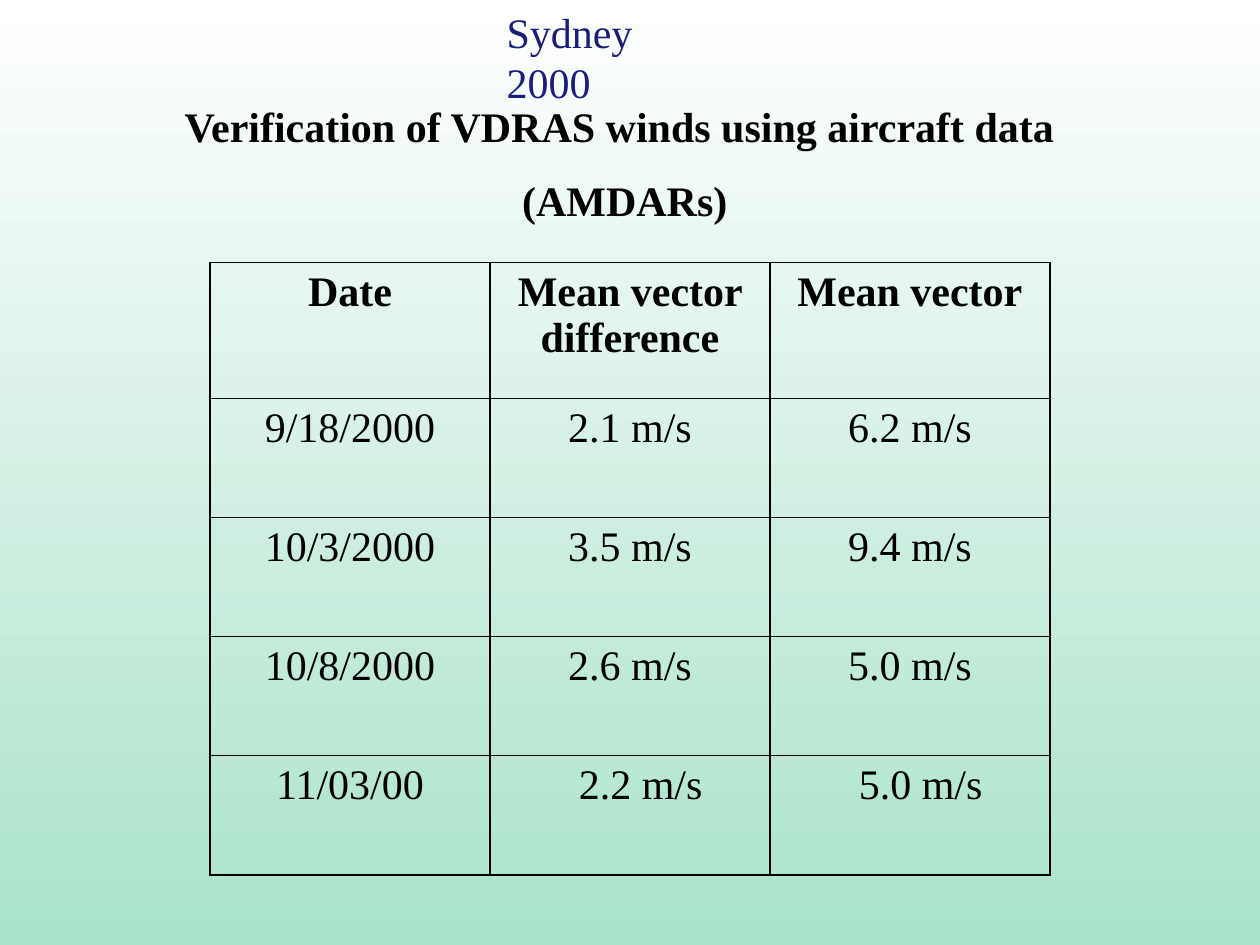
from dataclasses import dataclass

from pptx import Presentation
from pptx import util as u
from pptx.dml.color import RGBColor
from pptx.enum import text
from pptx.oxml import parse_xml
from pptx.oxml.ns import nsdecls


@dataclass(frozen=True)
class Theme:
    font: str = "Times New Roman"
    size: float = 24
    ink: str = "000000"
    navy: str = "191E7A"
    gradient: tuple[str, str] = ("AAE2CA", "FFFFFF")
    border_width: float = 1


@dataclass(frozen=True)
class Area:
    """A rectangle in shares of the slide's width and height."""
    left: float
    top: float
    width: float
    height: float

    def lengths(self) -> dict[str, int]:
        return {"left": int(self.left * WIDTH), "top": int(self.top * HEIGHT),
                "width": int(self.width * WIDTH), "height": int(self.height * HEIGHT)}


@dataclass(frozen=True)
class Reading:
    date: str
    difference: str
    mean: str
    indent: float = 0  # extra left margin of the values, inches

    def values(self) -> tuple[str, str, str]:
        return self.date, self.difference, self.mean


THEME = Theme()
WIDTH, HEIGHT = u.Inches(10), u.Inches(7.5)
TITLE_AREA = Area(0.392, 0, 0.195, 0.5 / 7.5)
HEADING_AREA = Area(1 / 12, 0.1, 0.825, 1.1 / 7.5)
TABLE_AREA = Area(1 / 6, 5 / 18, 2 / 3, 0.648)
HEADER_SHARE = 2 / 9  # of the table's height
HEADING = ("Verification of VDRAS winds using aircraft data ", "(AMDARs)")
READINGS = (
    Reading("Date", "Mean vector difference", "Mean vector"),
    Reading("9/18/2000", "2.1 m/s", "6.2 m/s"),
    Reading("10/3/2000", "3.5 m/s", "9.4 m/s"),
    Reading("10/8/2000", "2.6 m/s", "5.0 m/s"),
    Reading("11/03/00", "2.2 m/s", "5.0 m/s", indent=0.17),
)


def apply(target, values: dict) -> None:
    for name, value in values.items():
        setattr(target, name, value)


def write(frame, lines: tuple[str, ...], color: str, bold: bool = False,
          align=text.PP_ALIGN.CENTER, gap: float = 0) -> None:
    for index, line in enumerate(lines):
        para = frame.paragraphs[0] if index == 0 else frame.add_paragraph()
        apply(para, {"alignment": align, "space_before": u.Pt(gap if index else 0)})
        span = para.add_run()
        span.text = line
        apply(span.font, {"name": THEME.font, "size": u.Pt(THEME.size), "bold": bold})
        span.font.color.rgb = RGBColor.from_string(color)


def paint_background(page) -> None:
    fill = page.background.fill
    fill.gradient()
    fill.gradient_angle = 90
    for stop, color in zip(fill.gradient_stops, THEME.gradient):
        stop.color.rgb = RGBColor.from_string(color)


def border(cell) -> None:
    properties = cell._tc.get_or_add_tcPr()
    for side in "LRTB":
        properties.append(parse_xml(
            f'<a:ln{side} {nsdecls("a")} w="{u.Pt(THEME.border_width)}"><a:solidFill>'
            f'<a:srgbClr val="{THEME.ink}"/></a:solidFill></a:ln{side}>'))


def add_readings(page) -> None:
    area = TABLE_AREA.lengths()
    table = page.shapes.add_table(len(READINGS), 3, **area).table
    apply(table, {"first_row": False, "horz_banding": False})
    header_height = int(area["height"] * HEADER_SHARE)
    body_height = (area["height"] - header_height) // (len(READINGS) - 1)
    for row, reading in enumerate(READINGS):
        table.rows[row].height = body_height if row else header_height
        for column, value in enumerate(reading.values()):
            cell = table.cell(row, column)
            border(cell)
            cell.fill.background()
            if column:
                cell.margin_left = u.Inches(0.1 + reading.indent)
            write(cell.text_frame, (value,), THEME.ink, bold=row == 0)


def main() -> None:
    deck = Presentation()
    apply(deck, {"slide_width": WIDTH, "slide_height": HEIGHT})
    page = deck.slides.add_slide(deck.slide_layouts[5])
    paint_background(page)

    # Verification results
    add_readings(page)

    # Heading above the table
    box = page.shapes.add_textbox(**HEADING_AREA.lengths())
    box.text_frame.word_wrap = True
    write(box.text_frame, HEADING, THEME.ink, bold=True, gap=13.5)

    # Slide title
    title = page.shapes.title
    apply(title, TITLE_AREA.lengths())
    apply(title.text_frame, {"word_wrap": False, "auto_size": text.MSO_AUTO_SIZE.NONE,
                             "vertical_anchor": text.MSO_ANCHOR.TOP})
    write(title.text_frame, ("Sydney 2000",), THEME.navy, align=text.PP_ALIGN.LEFT)

    deck.save("out.pptx")


if __name__ == "__main__":
    main()
